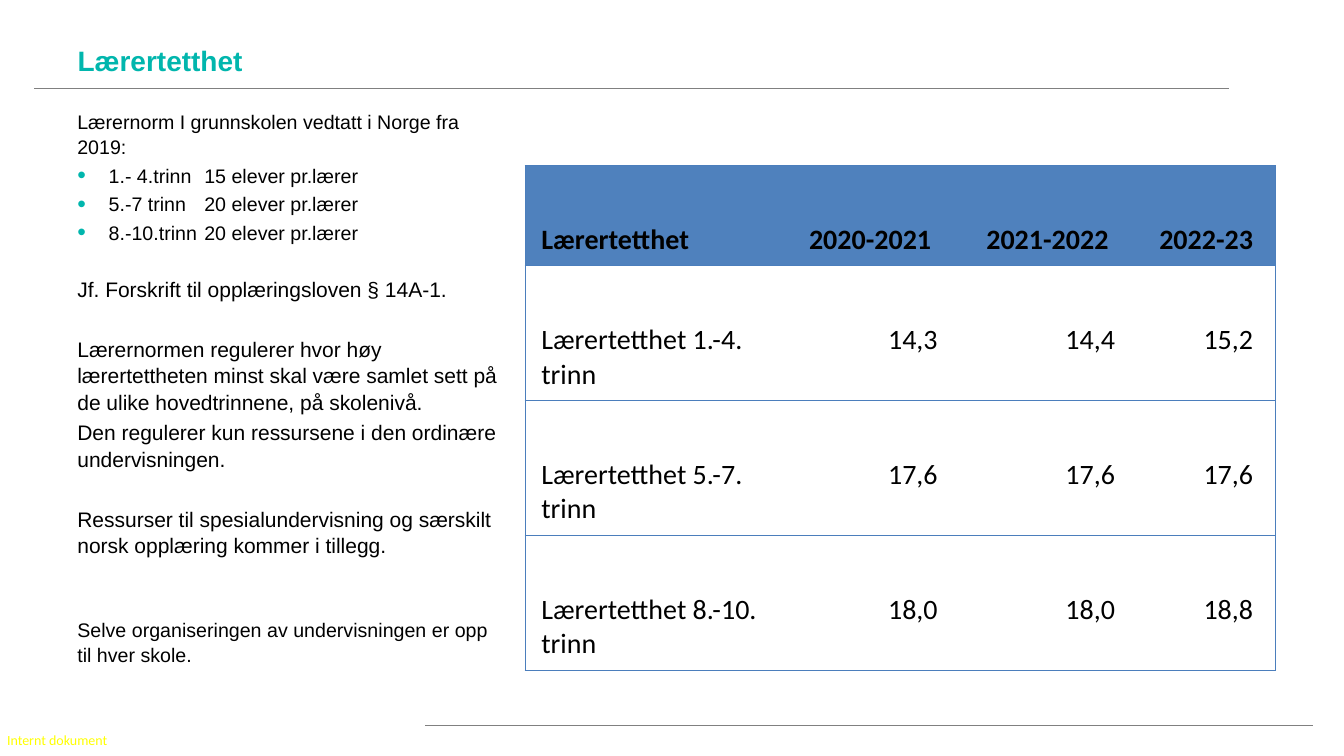
from dataclasses import dataclass
from lxml.etree import SubElement as Sub
from pptx import Presentation
from pptx.dml.color import RGBColor as RGB
from pptx.enum.shapes import MSO_CONNECTOR as Link
from pptx.enum.text import MSO_ANCHOR as Anchor, MSO_AUTO_SIZE as Auto, PP_ALIGN as Align
from pptx.oxml.ns import qn
from pptx.util import Cm, Pt


@dataclass(frozen=True)
class Theme:
    """Colours, fonts and type sizes of the slide."""
    teal: str = "01B6AD"
    black: str = "000000"
    white: str = "FFFFFF"
    grey: str = "808080"
    yellow: str = "FFFF00"
    head: str = "4F81BD"
    edge: str = "4B7EBC"
    sans: str = "Arial"
    cell: str = "Calibri"
    big: int = 20
    mid: int = 15
    text: int = 14
    small: int = 10


T = Theme()
NORM = [
    ("Lærernorm I grunnskolen vedtatt i Norge fra 2019:", T.text, 0, False),
    ("1.- 4.trinn\t15 elever pr.lærer", T.text, 2.5, True),
    ("5.-7 trinn\t20 elever pr.lærer", T.text, 2.5, True),
    ("8.-10.trinn\t20 elever pr.lærer", T.text, 2.5, True),
    ("Jf. Forskrift til opplæringsloven § 14A-1.", T.mid, 22.5, False),
    ("Lærernormen regulerer hvor høy lærertettheten minst skal være samlet sett på "
     "de ulike hovedtrinnene, på skolenivå.", T.mid, 23.2, False),
    ("Den regulerer kun ressursene i den ordinære undervisningen.", T.mid, 2.5, False),
    ("Ressurser til spesialundervisning og særskilt norsk opplæring kommer i tillegg.",
     T.mid, 23.5, False),
    ("Selve organiseringen av undervisningen er opp til hver skole.", T.text, 42, False),
]
ROWS = [
    ("Lærertetthet", "2020-2021", "2021-2022", "2022-23"),
    ("Lærertetthet 1.-4. trinn", "14,3", "14,4", "15,2"),
    ("Lærertetthet 5.-7. trinn", "17,6", "17,6", "17,6"),
    ("Lærertetthet 8.-10. trinn", "18,0", "18,0", "18,8"),
]
WIDE = (6.6, 4.37, 4.47, 3.48)
TALL = (2.52, 3.4, 3.4, 3.4)


def apply(item, **form):
    """Set each format value on the item."""
    for name, value in form.items():
        setattr(item, name, value)


def write(par, text, size, tint, face, bold=False):
    """Add a formatted run to a paragraph."""
    run = par.add_run()
    run.text = text
    apply(run.font, size=Pt(size), name=face, bold=bold)
    run.font.color.rgb = RGB.from_string(tint)


def place(item, box):
    """Move an item to its box."""
    apply(item, **dict(zip(("left", "top", "width", "height"), map(Cm, box))))


def title(slide, text, box):
    """Place the heading on the bottom edge of its box."""
    shape = slide.shapes.title
    place(shape, box)
    apply(shape.text_frame, vertical_anchor=Anchor.BOTTOM, auto_size=Auto.NONE, word_wrap=True)
    par = shape.text_frame.paragraphs[0]
    par.alignment = Align.LEFT
    write(par, text, T.big, T.teal, T.sans, True)


def rule(slide, left, right, top, width):
    """Draw a level line."""
    line = slide.shapes.add_connector(Link.STRAIGHT, Cm(left), Cm(top), Cm(right), Cm(top))
    line.line.color.rgb = RGB.from_string(T.grey)
    line.line.width = Pt(width)
    Sub(line.element.spPr, qn("a:effectLst"))


def bullet(par):
    """Give a paragraph a teal dot, a hanging indent and a tab stop."""
    props = par._p.get_or_add_pPr()
    props.set("marL", str(Cm(0.79)))
    props.set("indent", str(-Cm(0.79)))
    Sub(Sub(props, qn("a:buClr")), qn("a:srgbClr"), val=T.teal)
    Sub(props, qn("a:buSzPct"), val="125000")
    Sub(props, qn("a:buFont"), typeface=T.sans)
    Sub(props, qn("a:buChar"), char="•")
    Sub(Sub(props, qn("a:tabLst")), qn("a:tab"), pos=str(Cm(3.2)), algn="l")


def body(slide, items, box):
    """Place the text column."""
    frame = slide.shapes.add_textbox(*map(Cm, box)).text_frame
    frame.word_wrap = True
    for num, (text, size, gap, dot) in enumerate(items):
        par = frame.add_paragraph() if num else frame.paragraphs[0]
        if dot:
            bullet(par)
        apply(par, line_spacing=1.06, space_before=Pt(gap))
        write(par, text, size, T.black, T.sans)


def border(cell, sides):
    """Draw the named sides of a cell and clear the rest."""
    for side in "LRTB":
        line = Sub(cell._tc.get_or_add_tcPr(), qn("a:ln" + side), w=str(Pt(0.75)))
        if side in sides:
            Sub(Sub(line, qn("a:solidFill")), qn("a:srgbClr"), val=T.edge)
        else:
            Sub(line, qn("a:noFill"))


def grid(slide, rows, left, top):
    """Place the table with its top left corner at the given point."""
    box = map(Cm, (left, top, sum(WIDE), sum(TALL)))
    table = slide.shapes.add_table(len(rows), len(WIDE), *box).table
    for col, wide in zip(table.columns, WIDE):
        col.width = Cm(wide)
    for row, (tall, texts) in enumerate(zip(TALL, rows)):
        table.rows[row].height = Cm(tall)
        for col, text in enumerate(texts):
            cell = table.cell(row, col)
            last = col == len(WIDE) - 1
            border(cell, "TB" + "L" * (col == 0) + "R" * last)
            cell.fill.solid()
            cell.fill.fore_color.rgb = RGB.from_string(T.white if row else T.head)
            pad = 0.73 if not row and 0 < col and not last else 0.57
            apply(cell, margin_left=Cm(0.41), margin_right=Cm(pad if col else 0.41),
                  margin_top=Cm(1.45), margin_bottom=Cm(0.2), vertical_anchor=Anchor.TOP)
            par = cell.text_frame.paragraphs[0]
            par.alignment = Align.RIGHT if col else Align.LEFT
            write(par, text, T.big, T.black, T.cell, not row)


def label(slide, text, box):
    """Place the document class in the corner."""
    frame = slide.shapes.add_textbox(*map(Cm, box)).text_frame
    apply(frame, margin_left=0, margin_right=0, margin_top=0, margin_bottom=0, word_wrap=False)
    write(frame.paragraphs[0], text, T.small, T.yellow, T.cell)


def main():
    """Build and save the slide."""
    deck = Presentation()
    apply(deck, slide_width=Cm(33.87), slide_height=Cm(19.05))
    slide = deck.slides.add_slide(deck.slide_layouts[5])
    label(slide, "Internt dokument", (0.18, 18.44, 2.64, 0.43))
    rule(slide, 0.86, 30.96, 2.22, 0.5)
    rule(slide, 10.72, 33.1, 18.29, 0.75)
    title(slide, "Lærertetthet", (1.7, 0.1, 11.15, 1.98))
    body(slide, NORM, (1.7, 2.62, 11.15, 14.4))
    grid(slide, ROWS, 13.23, 4.17)
    deck.save("out.pptx")


if __name__ == "__main__":
    main()
